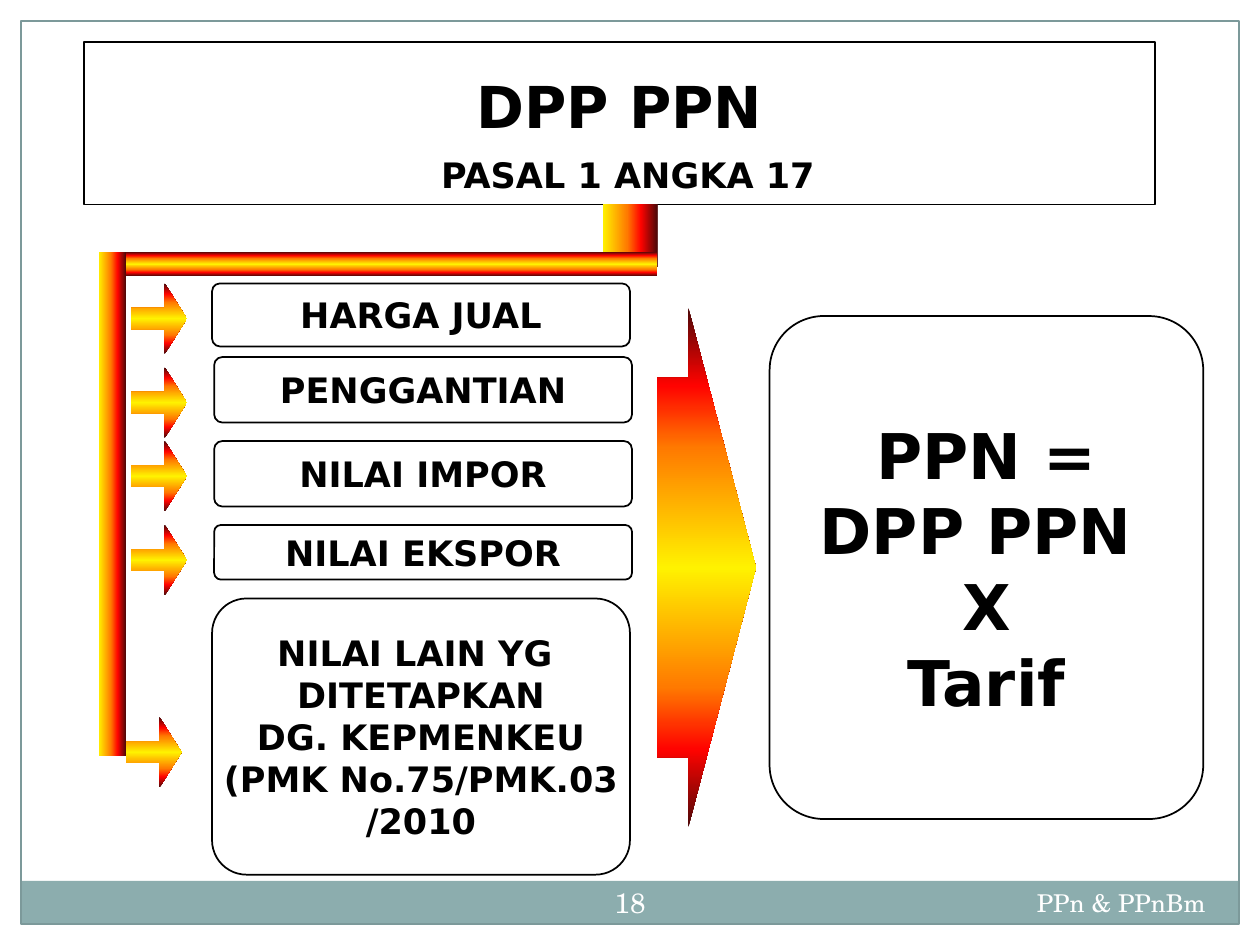
from lxml import etree
from pptx import Presentation
from pptx.dml.color import RGBColor
from pptx.enum.shapes import MSO_SHAPE
from pptx.enum.text import MSO_ANCHOR, MSO_AUTO_SIZE, PP_ALIGN
from pptx.oxml.ns import qn
from pptx.util import Inches, Pt

RECT, ROUNDED, ARROW = MSO_SHAPE.RECTANGLE, MSO_SHAPE.ROUNDED_RECTANGLE, MSO_SHAPE.RIGHT_ARROW
TOP, MIDDLE, BOTTOM = MSO_ANCHOR.TOP, MSO_ANCHOR.MIDDLE, MSO_ANCHOR.BOTTOM
CENTER, RIGHT = PP_ALIGN.CENTER, PP_ALIGN.RIGHT
BODY_FONT, FOOTER_FONT = "DejaVu Sans", "TeX Gyre Schola"
BLACK, WHITE, TEAL, FRAME_TEAL = "000000", "FFFFFF", "8CADAE", "7C999A"
CELL = Inches(1) / 6
COLUMNS, ROWS = 60, 45
FADE = [(0, "FFF200"), (45, "FF7A00"), (70, "FF0300"), (100, "4D0808")]
GLOW = [(0, "4D0808"), (15, "FF0300"), (27, "FF7A00"), (50, "FFF200"),
        (73, "FF7A00"), (85, "FF0300"), (100, "4D0808")]
SOURCES = [
    (0, 0, 3, ["HARGA JUAL"]),
    (0.1, 3.5, 3.12, ["PENGGANTIAN"]),
    (0.1, 7.5, 3.12, ["NILAI IMPOR"]),
    (0.1, 11.5, 2.6, ["NILAI EKSPOR"]),
    (0, 15, 13.15, ["NILAI LAIN YG ", "DITETAPKAN", "DG. KEPMENKEU",
                    "(PMK No.75/PMK.03", "/2010"]),
]
POINTERS = [(0.25, 0), (0.25, 4), (0.25, 7.5), (0.25, 11.5), (0, 20.65)]


def color(hex_code):
    """Turn a hex string into a colour."""
    return RGBColor.from_string(hex_code)


def lengths(box):
    """Turn grid columns and rows into slide lengths."""
    return [round(part * CELL) for part in box]


def within(box, left, top, width, height):
    """Give a box measured from the corner of another box."""
    return box[0] + left, box[1] + top, width, height


def add_block(slide, kind, box, fill=None, line=None, weight=1, adjustments=()):
    """Add a flat shape with optional fill and outline."""
    block = slide.shapes.add_shape(kind, *lengths(box))
    block.shadow.inherit = False
    for index, value in enumerate(adjustments):
        block.adjustments[index] = value
    if fill:
        block.fill.solid()
        block.fill.fore_color.rgb = color(fill)
    else:
        block.fill.background()
    if line:
        block.line.color.rgb = color(line)
        block.line.width = Pt(weight)
    else:
        block.line.fill.background()
    return block


def add_gradient_block(slide, kind, box, stops, angle, adjustments=()):
    """Add a shape filled with a linear gradient."""
    block = add_block(slide, kind, box, adjustments=adjustments)
    block.fill.gradient()
    block.fill.gradient_angle = angle
    stop_list = block.element.spPr.find(qn("a:gradFill")).find(qn("a:gsLst"))
    for old_stop in list(stop_list):
        stop_list.remove(old_stop)
    for position, hex_code in stops:
        stop = etree.SubElement(stop_list, qn("a:gs"), pos=str(position * 1000))
        etree.SubElement(stop, qn("a:srgbClr"), val=hex_code)


def add_run(paragraph, text, size, font=BODY_FONT, hex_code=BLACK, bold=True):
    """Add one formatted run."""
    run = paragraph.add_run()
    run.text = text
    run.font.size = Pt(size)
    run.font.name = font
    run.font.bold = bold
    run.font.color.rgb = color(hex_code)


def add_card(slide, box, lines, size):
    """Add a rounded card with centred bold lines."""
    card = add_block(slide, ROUNDED, box, line=BLACK, adjustments=[0.125])
    frame = card.text_frame
    frame.word_wrap = False
    frame.vertical_anchor = MIDDLE
    for index, line in enumerate(lines):
        paragraph = frame.add_paragraph() if index else frame.paragraphs[0]
        paragraph.alignment = CENTER
        add_run(paragraph, line, size)


def add_footer_text(slide, box, text, size, alignment, anchor, inset):
    """Add one line of white footer text."""
    frame = slide.shapes.add_textbox(*lengths(box)).text_frame
    frame.word_wrap = True
    frame.vertical_anchor = anchor
    frame.margin_left = frame.margin_right = Inches(inset)
    frame.paragraphs[0].alignment = alignment
    add_run(frame.paragraphs[0], text, size, FOOTER_FONT, WHITE, False)


def build_frame(slide, box):
    """Draw the page border and the footer band."""
    add_block(slide, RECT, within(box, 0, 40.95, 58, 2.05), fill=TEAL)
    add_block(slide, RECT, box, line=FRAME_TEAL, weight=0.75)
    add_footer_text(slide, within(box, 37, 41, 20, 2.4), "PPn & PPnBm", 14, RIGHT, TOP, 0.1)
    add_footer_text(slide, within(box, 27, 40.5, 4, 2.9), "18", 16, CENTER, MIDDLE, 0.05)


def build_title(slide, box):
    """Place the outlined title with its article reference."""
    title = slide.shapes.title
    title.left, title.top, title.width, title.height = lengths(box)
    title.line.color.rgb = color(BLACK)
    title.line.width = Pt(0.75)
    frame = title.text_frame
    frame.auto_size = MSO_AUTO_SIZE.NONE
    frame.vertical_anchor = BOTTOM
    heading = frame.paragraphs[0]
    heading.alignment = CENTER
    add_run(heading, "DPP PPN", 33)
    heading.add_line_break()
    add_run(heading, " ", 28)
    add_run(heading, "PASAL 1 ANGKA 17", 20)


def build_bracket(slide, box):
    """Draw the pipe that leads from the title to the pointers."""
    add_gradient_block(slide, RECT, within(box, 0, 2.28, 1.3, 24), FADE, 0)
    add_gradient_block(slide, RECT, within(box, 24, 0, 2.6, 3), FADE, 0)
    add_gradient_block(slide, RECT, within(box, 1.3, 2.28, 25.3, 1.15), GLOW, 90)


def build_sources(slide, box):
    """Stack the cards that name each tax base."""
    for left, top, height, lines in SOURCES:
        add_card(slide, within(box, left, top, box[2], height), lines, 20)


def build_pointers(slide, box):
    """Draw the small arrows beside the cards."""
    for left, top in POINTERS:
        add_gradient_block(slide, ARROW, within(box, left, top, 2.65, 3.35),
                           GLOW, 90, [0.306, 0.397])


def build_result(slide, box):
    """Draw the large arrow and the formula card."""
    add_gradient_block(slide, ARROW, within(box, 0, 0, 4.7, 24.75), GLOW, 90, [0.73, 0.685])
    add_card(slide, within(box, 5.35, 0.4, 20.65, 23.95),
             ["PPN =", "DPP PPN ", "X", "Tarif"], 36)


def main():
    """Build and save the slide."""
    deck = Presentation()
    deck.slide_width, deck.slide_height = lengths((COLUMNS, ROWS))
    slide = deck.slides.add_slide(deck.slide_layouts[5])
    build_frame(slide, (1, 1, 58, 43))
    build_sources(slide, (10.1, 13.5, 19.9, 28.15))
    build_bracket(slide, (4.7, 9.72, 26.6, 26.28))
    build_result(slide, (31.3, 14.65, 26, 24.75))
    build_title(slide, (4, 2, 51, 7.75))
    build_pointers(slide, (6, 13.5, 2.9, 24))
    deck.save("out.pptx")


if __name__ == "__main__":
    main()
